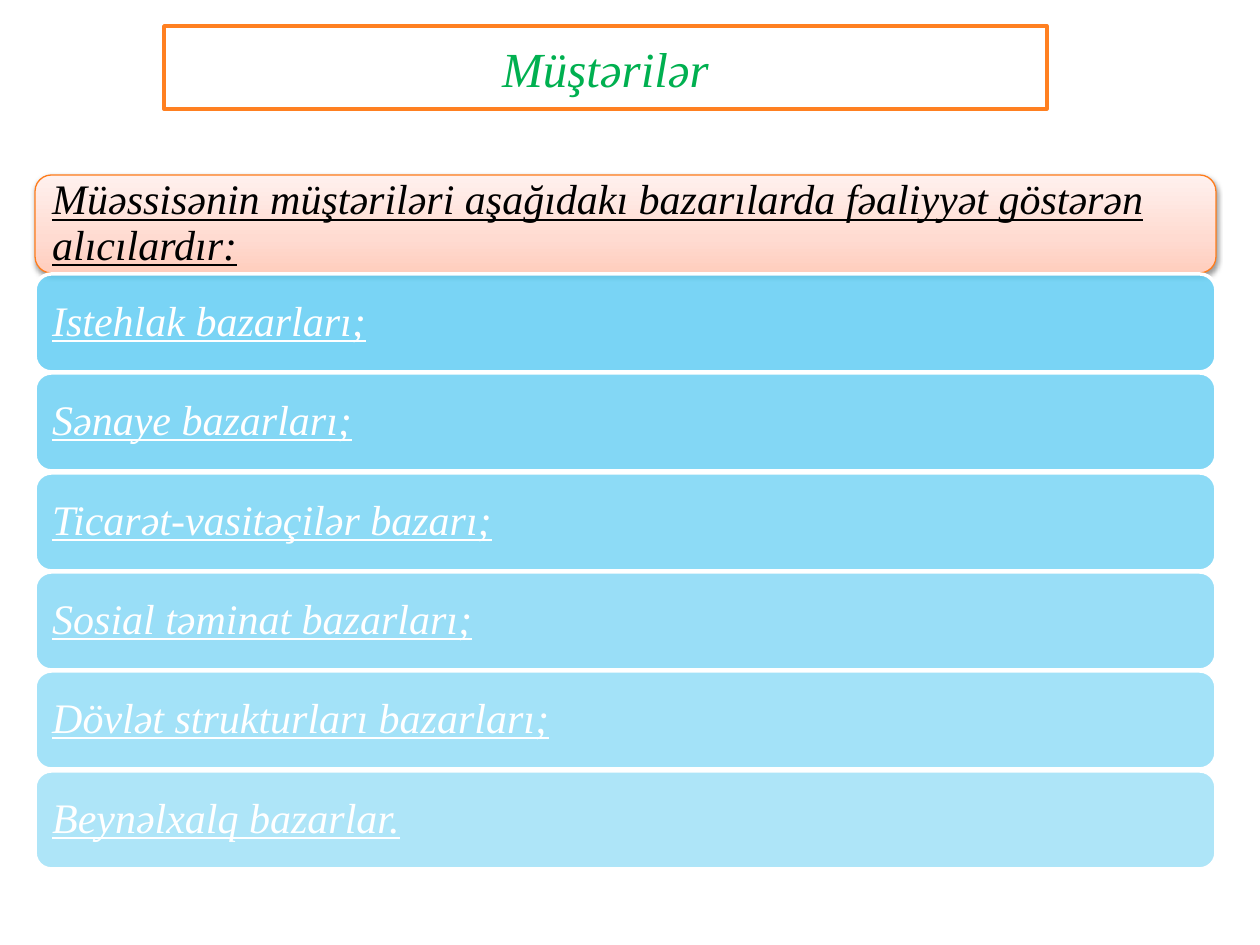
from dataclasses import dataclass

from pptx import Presentation, util as u
from pptx.dml.color import RGBColor
from pptx.enum import shapes, text
from pptx.oxml import parse_xml
from pptx.oxml.ns import nsdecls, qn

SCALE = u.Inches(1) / 126  # EMU per px


@dataclass(frozen=True)
class Theme:
    font: str = "Times New Roman"
    big: int = 28
    body: int = 24
    white: str = "FFFFFF"
    black: str = "000000"
    green: str = "00B050"
    frame: str = "FF8021"
    edge: str = "FF7C1B"
    blue: str = "5ECCF3"
    blush: tuple = ((0, "FFCDBD"), (35, "FFDBD1"), (100, "FFF1EE"))


T = Theme()
HEAD = "Müəssisənin müştəriləri aşağıdakı bazarılarda fəaliyyət göstərən alıcılardır:"
ITEMS = [
    "Istehlak bazarları;",
    "Sənaye bazarları;",
    "Ticarət-vasitəçilər bazarı;",
    "Sosial təminat bazarları;",
    "Dövlət strukturları bazarları;",
    "Beynəlxalq bazarlar.",
]

# Bar grid in px: the tops of the first and last bar are SPAN apart
LEFT, TOP, WIDE, HIGH, SPAN = 35, 175, 1181, 98, 596


def px(n):
    return u.Emu(round(n * SCALE))


def box(slide, kind, area, fill, line, width):
    """Add a shape with a plain fill and outline."""
    shape = slide.shapes.add_shape(kind, *map(px, area))
    shape.shadow.inherit = False
    shape.fill.solid()
    shape.fill.fore_color.rgb = RGBColor.from_string(fill)
    shape.line.color.rgb = RGBColor.from_string(line)
    shape.line.width = u.Pt(width)
    return shape


def write(shape, words, size=T.body, color=T.white, align=text.PP_ALIGN.LEFT,
          under=True, space=0.9):
    """Set the text of a shape, centred vertically."""
    frame = shape.text_frame
    frame.word_wrap = True
    frame.vertical_anchor = text.MSO_ANCHOR.MIDDLE
    frame.margin_left = frame.margin_right = u.Inches(0.1)
    frame.margin_top = frame.margin_bottom = u.Inches(0.1)
    para = frame.paragraphs[0]
    para.alignment = align
    para.line_spacing = space
    run = para.add_run()
    run.text = words
    font = run.font
    font.name, font.size = T.font, u.Pt(size)
    font.italic, font.underline = True, under
    font.color.rgb = RGBColor.from_string(color)


def fade(shape, alpha):
    """Set the opacity of a solid fill, in percent."""
    tone = shape.fill._xPr.find(qn("a:solidFill"))[0]
    tone.append(parse_xml(f'<a:alpha {nsdecls("a")} val="{alpha * 1000}"/>'))


def glow(shape, stops):
    """Give a shape an upward gradient and a soft shadow."""
    props = shape._element.spPr
    marks = "".join(
        f'<a:gs pos="{pos * 1000}"><a:srgbClr val="{tone}"/></a:gs>'
        for pos, tone in stops)
    grad = parse_xml(
        f'<a:gradFill {nsdecls("a")} rotWithShape="1"><a:gsLst>{marks}</a:gsLst>'
        '<a:lin ang="16200000" scaled="1"/></a:gradFill>')
    props.replace(props.find(qn("a:solidFill")), grad)
    props.find(qn("a:effectLst")).append(parse_xml(
        f'<a:outerShdw {nsdecls("a")} blurRad="{u.Pt(3.1)}" dist="{u.Pt(1.6)}" '
        f'dir="5400000" rotWithShape="0"><a:srgbClr val="{T.black}">'
        '<a:alpha val="38000"/></a:srgbClr></a:outerShdw>'))


def bar(slide, row, fill, line, width):
    """Add one rounded bar of the list."""
    top = TOP + row * SPAN // len(ITEMS)
    return box(slide, shapes.MSO_SHAPE.ROUNDED_RECTANGLE,
               (LEFT, top, WIDE, HIGH), fill, line, width)


def main():
    deck = Presentation()
    deck.slide_width, deck.slide_height = px(1260), px(945)
    slide = deck.slides.add_slide(deck.slide_layouts[6])

    # Title
    title = box(slide, shapes.MSO_SHAPE.RECTANGLE, (164, 26, 883, 83),
                T.white, T.frame, 2)
    write(title, "Müştərilər", size=T.big, color=T.green,
          align=text.PP_ALIGN.CENTER, under=False, space=1.0)

    # Heading bar
    head = bar(slide, 0, T.white, T.edge, 0.75)
    glow(head, T.blush)
    write(head, HEAD, color=T.black)

    # Market bars, paler from 83 % down to 50 %
    for row, words in enumerate(ITEMS, 1):
        item = bar(slide, row, T.blue, T.white, 2)
        fade(item, round(90 - row * 40 / len(ITEMS)))
        write(item, words)

    deck.save("out.pptx")


if __name__ == "__main__":
    main()
